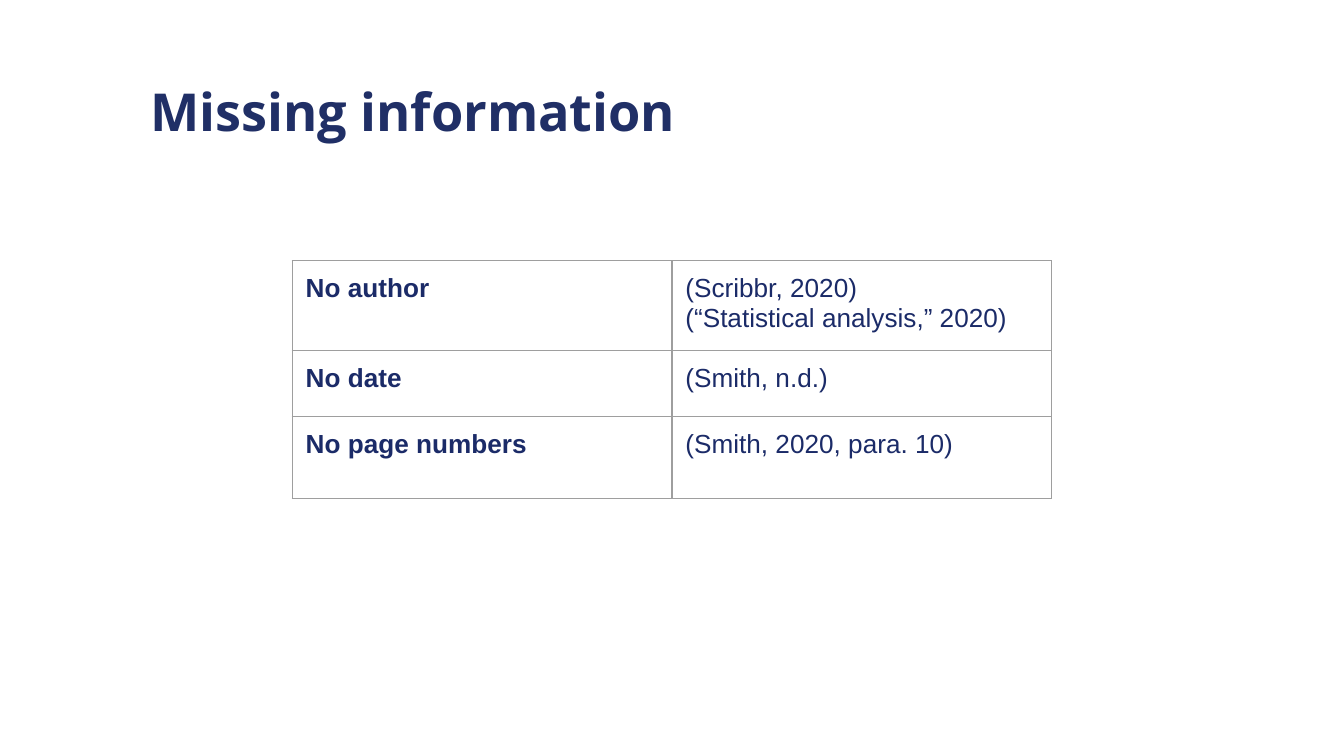
from lxml import etree
from pptx import Presentation
from pptx import util as u
from pptx.dml import color
from pptx.enum import text
from pptx.oxml import ns

COLORS = {"title": "202F66", "body": "1B2B68", "rule": "9E9E9E"}
ROWS = [
    ("No author", ["(Scribbr, 2020)", "(“Statistical analysis,” 2020)"], 0.61),
    ("No date", ["(Smith, n.d.)"], 0.49),
    ("No page numbers", ["(Smith, 2020, para. 10)"], 0.61),
]
WIDE = 10
SPAN = 5.65


def pad(box, low=0.1):
    box.margin_left = box.margin_right = box.margin_top = u.Inches(0.1)
    box.margin_bottom = u.Inches(low)


def write(frame, lines, face, size, tone, bold):
    for i, line in enumerate(lines):
        para = frame.paragraphs[0] if i == 0 else frame.add_paragraph()
        para.line_spacing = 1.0
        run = para.add_run()
        run.text = line
        font = run.font
        font.name = face
        font.size = u.Pt(size)
        font.bold = bold
        font.color.rgb = color.RGBColor.from_string(COLORS[tone])
        etree.SubElement(para._p, ns.qn("a:endParaRPr"), sz=str(size * 100))


def add_title(slide, words):
    box = slide.shapes.add_textbox(
        u.Inches(1.02), u.Inches(0.49), u.Inches(7.87), u.Inches(0.63))
    frame = box.text_frame
    frame.word_wrap = True
    frame.vertical_anchor = text.MSO_ANCHOR.MIDDLE
    pad(frame, 0.06)
    write(frame, [words], "Open Sans", 28, "title", True)


def add_rules(cell):
    props = cell._tc.get_or_add_tcPr()
    for i, side in enumerate(("lnL", "lnR", "lnT", "lnB")):
        line = etree.Element(ns.qn("a:" + side), w=str(u.Pt(0.75)))
        fill = etree.SubElement(line, ns.qn("a:solidFill"))
        etree.SubElement(fill, ns.qn("a:srgbClr"), val=COLORS["rule"])
        props.insert(i, line)


def add_cell(cell, lines, bold):
    pad(cell)
    cell.fill.background()
    write(cell.text_frame, lines, "Arial", 14, "body", bold)
    add_rules(cell)


def add_grid(slide):
    high = sum(row[2] for row in ROWS)
    grid = slide.shapes.add_table(
        len(ROWS), 2, u.Inches((WIDE - SPAN) / 2), u.Inches(1.94),
        u.Inches(SPAN), u.Inches(high)).table
    grid.first_row = grid.horz_banding = False
    for col in grid.columns:
        col.width = u.Inches(SPAN / 2)
    for i, (label, cites, tall) in enumerate(ROWS):
        grid.rows[i].height = u.Inches(tall)
        add_cell(grid.cell(i, 0), [label], True)
        add_cell(grid.cell(i, 1), cites, False)


def main():
    deck = Presentation()
    deck.slide_width = u.Inches(WIDE)
    deck.slide_height = u.Inches(WIDE * 9 / 16)
    slide = deck.slides.add_slide(deck.slide_layouts[6])
    add_title(slide, "Missing information")
    add_grid(slide)
    deck.save("out.pptx")


if __name__ == "__main__":
    main()
